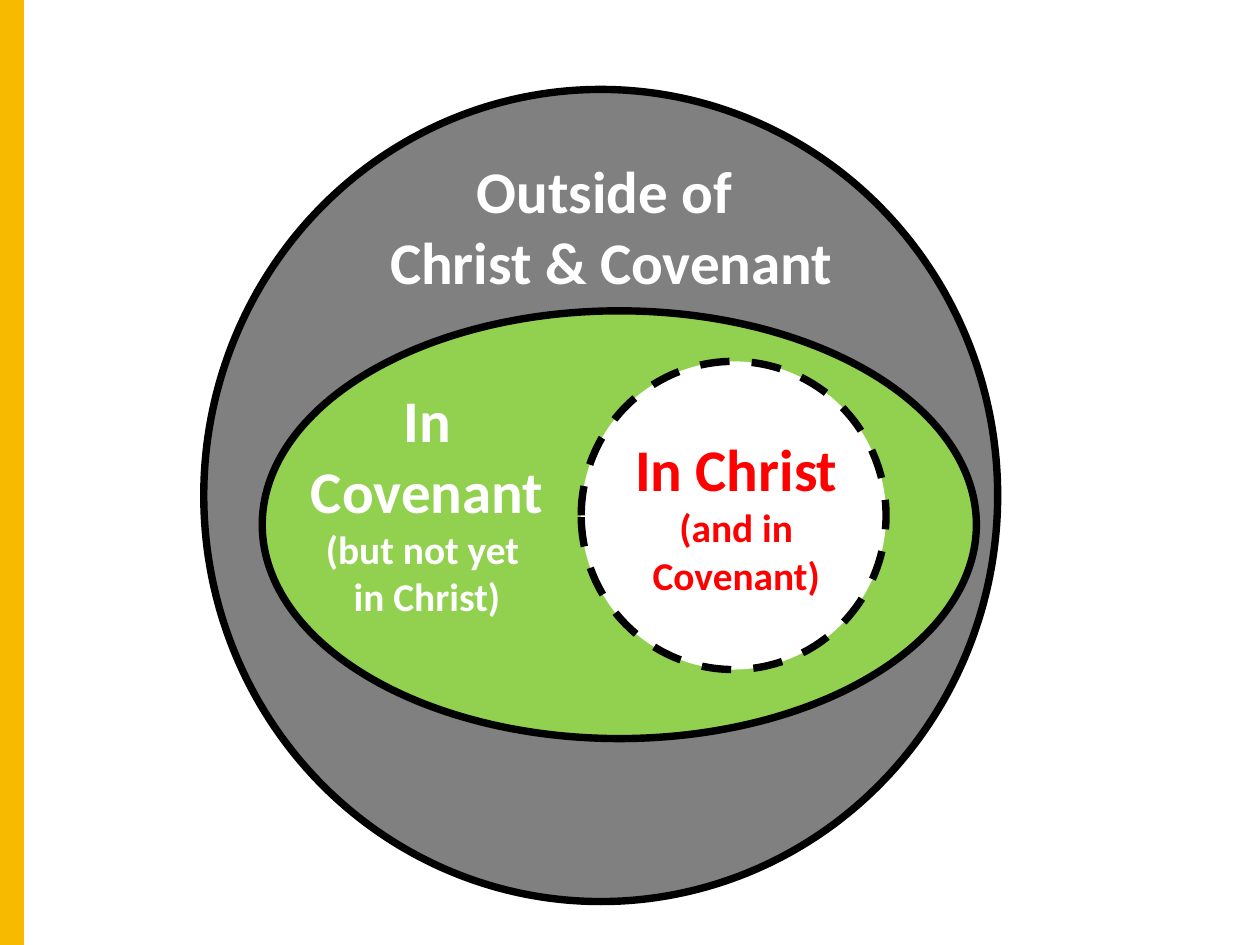
from lxml import etree
from pptx import Presentation
from pptx.dml.color import RGBColor
from pptx.enum.dml import MSO_LINE
from pptx.enum.shapes import MSO_CONNECTOR, MSO_SHAPE
from pptx.enum.text import MSO_ANCHOR, MSO_AUTO_SIZE, PP_ALIGN
from pptx.oxml.ns import qn
from pptx.util import Inches, Pt

WHITE = RGBColor(0xFF, 0xFF, 0xFF)
BLACK = RGBColor(0x00, 0x00, 0x00)
GRAY = RGBColor(0x80, 0x80, 0x80)
GREEN = RGBColor(0x92, 0xD0, 0x50)
RED = RGBColor(0xFF, 0x00, 0x00)
GOLD = RGBColor(0xF7, 0xBA, 0x01)

presentation = Presentation()
presentation.slide_width = Inches(14.22)
presentation.slide_height = Inches(10.67)
slide = presentation.slides.add_slide(presentation.slide_layouts[6])

# Nested regions, from the outermost to the innermost
regions = [
    ((2.3, 1.01, 8.96, 9.17), GRAY, MSO_LINE.SOLID),
    ((2.96, 3.51, 8.06, 4.83), GREEN, MSO_LINE.SOLID),
    ((6.56, 4.08, 3.44, 3.48), WHITE, MSO_LINE.DASH),
]
for box, fill_color, dash_style in regions:
    region = slide.shapes.add_shape(MSO_SHAPE.OVAL, *map(Inches, box))
    region.shadow.inherit = False
    region.fill.solid()
    region.fill.fore_color.rgb = fill_color
    region.line.color.rgb = BLACK
    region.line.width = Pt(6)
    region.line.dash_style = dash_style

# Gold band along the left edge
band = slide.shapes.add_connector(
    MSO_CONNECTOR.STRAIGHT, Inches(0.13), Inches(10.67), Inches(0.13), Inches(0))
band.line.color.rgb = GOLD
band.line.width = Pt(20)
etree.SubElement(band.element.spPr, qn("a:effectLst"))

# Region labels: each line with its size in points
labels = [
    ((3.75, 1.68, 6.3, 1.73), WHITE, [("Outside of ", 48), ("Christ & Covenant", 48)]),
    ((6.69, 4.82, 3.24, 2), RED, [("In Christ", 48), ("(and in Covenant)", 32)]),
    ((3.2, 4.26, 3.24, 2.8), WHITE, [("In Covenant", 48), ("(but not yet \nin Christ)", 32)]),
]
frame_format = {
    "word_wrap": True,
    "auto_size": MSO_AUTO_SIZE.SHAPE_TO_FIT_TEXT,
    "vertical_anchor": MSO_ANCHOR.MIDDLE,
    "margin_left": Inches(0.06),
    "margin_top": Inches(0.06),
    "margin_right": Inches(0.06),
    "margin_bottom": Inches(0.06),
}
for box, text_color, lines in labels:
    frame = slide.shapes.add_textbox(*map(Inches, box)).text_frame
    for name, value in frame_format.items():
        setattr(frame, name, value)
    for index, (text, size) in enumerate(lines):
        paragraph = frame.add_paragraph() if index else frame.paragraphs[0]
        paragraph.text = text
        paragraph.alignment = PP_ALIGN.CENTER
        for run in paragraph.runs:
            for name, value in {"name": "Calibri", "size": Pt(size), "bold": True}.items():
                setattr(run.font, name, value)
            run.font.color.rgb = text_color

presentation.save("out.pptx")
